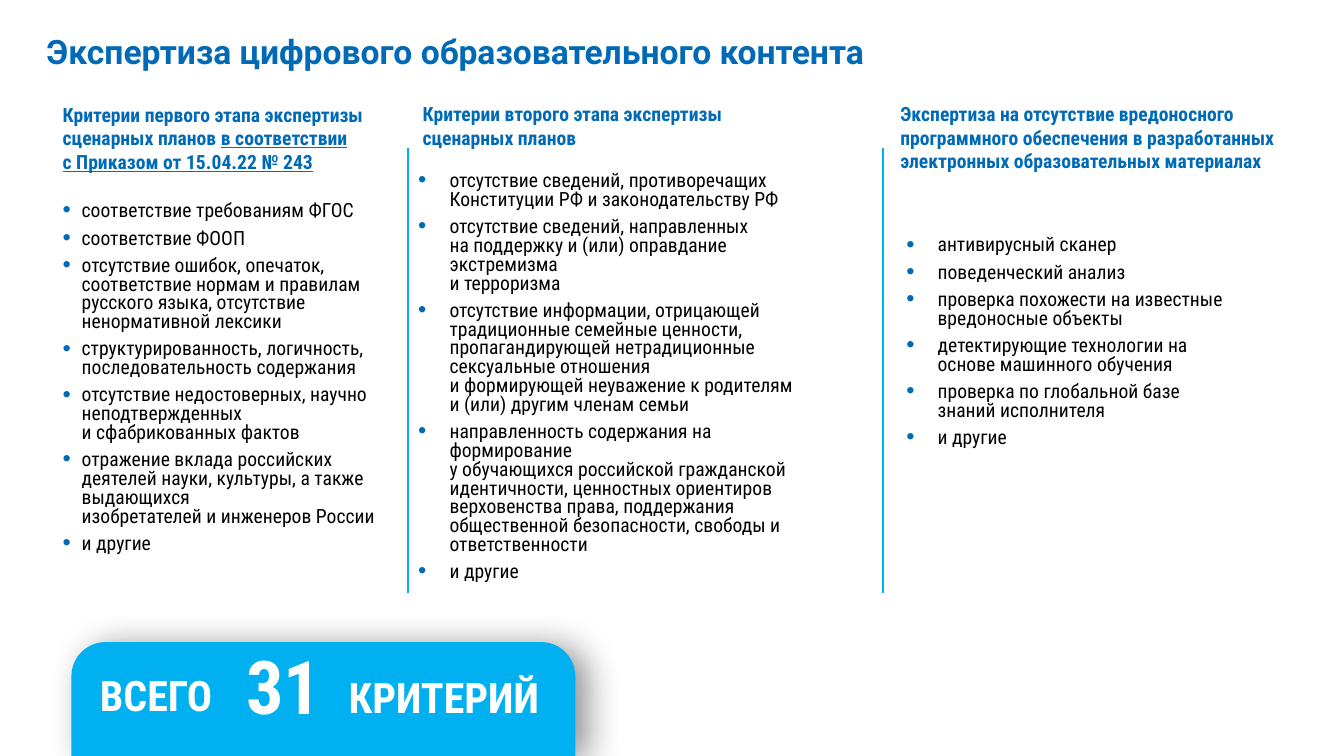
from copy import deepcopy

from lxml.etree import SubElement
from pptx import Presentation
from pptx.dml.color import RGBColor
from pptx.enum.shapes import MSO_CONNECTOR, MSO_SHAPE
from pptx.enum.text import MSO_ANCHOR, MSO_AUTO_SIZE, PP_ALIGN
from pptx.oxml.ns import qn
from pptx.util import Cm, Pt

COLORS = {"blue": "006AB7", "cyan": "00B0F0", "black": "000000", "white": "FFFFFF"}

TITLE = {"name": "Roboto", "size": Pt(24), "bold": True}
HEADING = {"name": "Roboto Condensed", "size": Pt(14), "bold": True}
ITEM = {"name": "Roboto Condensed", "size": Pt(14), "bold": False}
WORD = {"name": "Roboto Condensed", "size": Pt(30), "bold": True}
NUMBER = {"name": "Roboto Condensed", "size": Pt(53), "bold": True}

COLUMNS = [
    {
        "heading": [("Критерии первого этапа экспертизы сценарных планов ", False),
                    ("в соответствии\nс Приказом от 15.04.22 № 243", True)],
        "heading_area": (1.45, 2.46, 8.51, 2.64),
        "list_area": (1.45, 4.98, 8.66, 10.29),
        "indent": 0.48,
        "items": [
            "соответствие требованиям ФГОС",
            "соответствие ФООП",
            "отсутствие ошибок, опечаток, соответствие нормам и правилам "
            "русского языка, отсутствие ненормативной лексики",
            "структурированность, логичность, последовательность содержания",
            "отсутствие недостоверных, научно неподтвержденных\nи сфабрикованных фактов",
            "отражение вклада российских деятелей науки, культуры, а также "
            "выдающихся\nизобретателей и инженеров России",
            "и другие",
        ],
    },
    {
        "heading": [("Критерии второго этапа экспертизы сценарных планов", False)],
        "heading_area": (10.52, 2.44, 8.05, 1.45),
        "list_area": (10.41, 4.22, 10.74, 11.3),
        "indent": 0.79,
        "items": [
            "отсутствие сведений, противоречащих\nКонституции РФ и законодательству РФ",
            "отсутствие сведений, направленных\nна поддержку и (или) оправдание "
            "экстремизма\nи терроризма",
            "отсутствие информации, отрицающей традиционные семейные ценности, "
            "пропагандирующей нетрадиционные сексуальные отношения\n"
            "и формирующей неуважение к родителям\nи (или) другим членам семьи",
            "направленность содержания на формирование\n"
            "у обучающихся российской гражданской идентичности, ценностных ориентиров "
            "верховенства права, поддержания общественной безопасности, свободы и "
            "ответственности",
            "и другие",
        ],
    },
    {
        "heading": [("Экспертиза на отсутствие вредоносного программного обеспечения "
                     "в разработанных электронных образовательных материалах", False)],
        "heading_area": (22.56, 2.44, 9.73, 3.25),
        "list_area": (22.71, 5.84, 8.59, 6.22),
        "indent": 0.79,
        "items": [
            "антивирусный сканер",
            "поведенческий анализ",
            "проверка похожести на известные вредоносные объекты",
            "детектирующие технологии на основе машинного обучения",
            "проверка по глобальной базе знаний исполнителя",
            "и другие",
        ],
    },
]

TOTAL = [
    ("ВСЕГО", WORD, (1.47, 16.87, 4.93, 1.27)),
    ("31", NUMBER, (5.21, 16.13, 3.89, 2.26)),
    ("КРИТЕРИЙ", WORD, (8.13, 16.92, 6.12, 1.27)),
]


def rgb(color):
    """Return the named colour."""
    return RGBColor.from_string(COLORS[color])


def apply(target, values):
    """Set every attribute in values on target."""
    for name, value in values.items():
        setattr(target, name, value)


def prepare_frame(frame, inset):
    """Make a text frame wrap from its top with equal margins."""
    sides = ("margin_left", "margin_top", "margin_right", "margin_bottom")
    apply(frame, dict.fromkeys(sides, Cm(inset)))
    apply(frame, {"word_wrap": True, "auto_size": MSO_AUTO_SIZE.NONE,
                  "vertical_anchor": MSO_ANCHOR.TOP})


def add_box(page, area, inset=0.13):
    """Add a text box and return its text frame."""
    frame = page.shapes.add_textbox(*map(Cm, area)).text_frame
    prepare_frame(frame, inset)
    return frame


def add_span(para, text, style, color, underline=False):
    """Add formatted text, with a line break at each newline."""
    for number, line in enumerate(text.split("\n")):
        if number:
            para.add_line_break()
            line_break = para._p.findall(qn("a:br"))[-1]
            line_break.append(deepcopy(span.font._element))
        span = para.add_run()
        span.text = line
        apply(span.font, {**style, "underline": underline})
        span.font.color.rgb = rgb(color)


def add_bullet(para, indent):
    """Give a paragraph a hanging blue bullet."""
    properties = para._p.get_or_add_pPr()
    properties.set("marL", str(Cm(indent)))
    properties.set("indent", str(-Cm(indent)))
    color = SubElement(properties, qn("a:buClr"))
    SubElement(color, qn("a:srgbClr"), val=COLORS["blue"])
    SubElement(properties, qn("a:buSzPct"), val="120000")
    SubElement(properties, qn("a:buFont"), typeface="Arial")
    SubElement(properties, qn("a:buChar"), char="•")


def add_title(page, text):
    """Place and format the slide title."""
    title = page.shapes.title
    apply(title, {"left": Cm(1.04), "top": Cm(0.66), "width": Cm(22.25), "height": Cm(1.32)})
    prepare_frame(title.text_frame, 0.13)
    para = title.text_frame.paragraphs[0]
    para.alignment = PP_ALIGN.LEFT
    add_span(para, text, TITLE, "blue")


def add_column(page, column):
    """Add a heading and the bulleted criteria under it."""
    heading = add_box(page, column["heading_area"]).paragraphs[0]
    for text, underline in column["heading"]:
        add_span(heading, text, HEADING, "blue", underline)
    frame = add_box(page, column["list_area"])
    for number, item in enumerate(column["items"]):
        para = frame.add_paragraph() if number else frame.paragraphs[0]
        add_bullet(para, column["indent"])
        apply(para, {"line_spacing": 0.8, "space_before": Pt(6 if number else 0)})
        add_span(para, item, ITEM, "black")


def add_divider(page, left):
    """Add a vertical line between columns."""
    line = page.shapes.add_connector(
        MSO_CONNECTOR.STRAIGHT, Cm(left), Cm(3.73), Cm(left), Cm(14.94))
    line.line.color.rgb = rgb("cyan")
    line.line.width = Pt(1.5)
    SubElement(line._element.spPr, qn("a:effectLst"))


def add_total_panel(page):
    """Add the shadowed panel with the number of criteria."""
    panel = page.shapes.add_shape(
        MSO_SHAPE.ROUND_2_SAME_RECTANGLE, Cm(1.8), Cm(16.18), Cm(12.7), Cm(2.87))
    panel.adjustments[0] = 0.3
    panel.fill.solid()
    panel.fill.fore_color.rgb = rgb("cyan")
    panel.line.fill.background()
    panel.shadow.inherit = False
    effects = panel._element.spPr.find(qn("a:effectLst"))
    shadow = SubElement(effects, qn("a:outerShdw"), blurRad=str(Pt(25)), dist=str(Pt(9)),
                        dir="900000", algn="tl", rotWithShape="0")
    color = SubElement(shadow, qn("a:srgbClr"), val=COLORS["black"])
    SubElement(color, qn("a:alpha"), val="41000")
    for text, style, area in TOTAL:
        para = add_box(page, area, 0).paragraphs[0]
        para.alignment = PP_ALIGN.CENTER
        add_span(para, text, style, "white")


def main():
    """Build the slide and save the deck."""
    deck = Presentation()
    apply(deck, {"slide_width": Cm(33.87), "slide_height": Cm(19.05)})
    page = deck.slides.add_slide(deck.slide_layouts[5])
    add_title(page, "Экспертиза цифрового образовательного контента")
    for column in COLUMNS:
        add_column(page, column)
    add_total_panel(page)
    for left in (10.29, 22.25):
        add_divider(page, left)
    deck.save("out.pptx")


if __name__ == "__main__":
    main()
